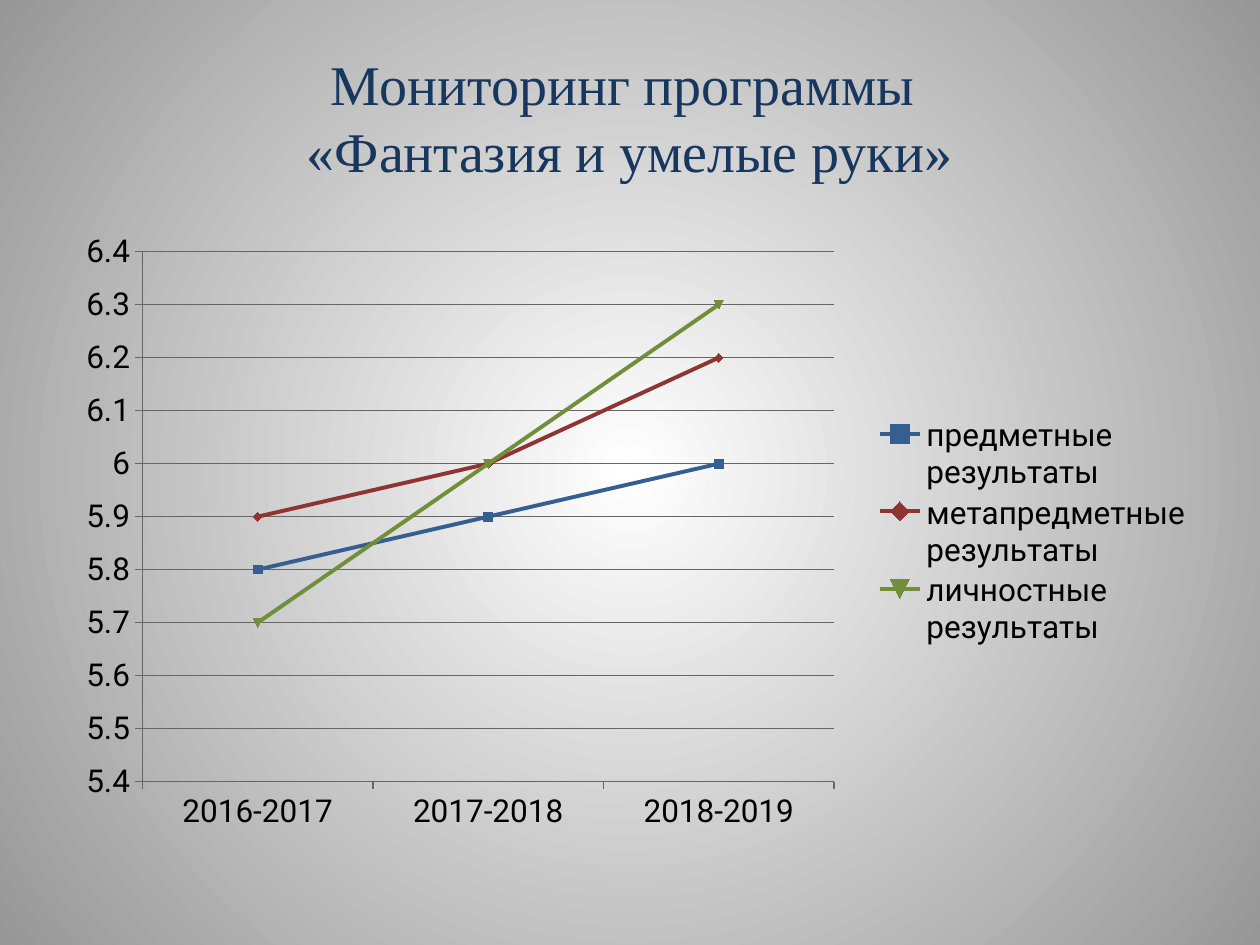
import pptx
import pptx.chart.data
import pptx.dml.color
import pptx.enum.chart
import pptx.enum.text
import pptx.oxml
import pptx.oxml.ns
import pptx.util

Pt = pptx.util.Pt
RGBColor = pptx.dml.color.RGBColor

NAVY = RGBColor(0x17, 0x37, 0x5E)
BLACK = RGBColor(0, 0, 0)
WHITE = RGBColor(0xFF, 0xFF, 0xFF)
SILVER = RGBColor(0x97, 0x97, 0x97)
GRID = RGBColor(0x66, 0x66, 0x66)
BLUE = RGBColor(0x35, 0x5E, 0x91)
RED = RGBColor(0x8E, 0x34, 0x32)
GREEN = RGBColor(0x71, 0x8E, 0x3A)

YEARS = ["2016-2017", "2017-2018", "2018-2019"]
RESULTS = [
    ("предметные результаты", (5.8, 5.9, 6), BLUE),
    ("метапредметные результаты", (5.9, 6, 6.2), RED),
    ("личностные результаты", (5.7, 6, 6.3), GREEN),
]


def write_text(para, text, font, size, color):
    """Fill a paragraph; a newline in the text becomes a line break."""
    for index, line in enumerate(text.split("\n")):
        if index:
            para.add_line_break()
        span = para.add_run()
        span.text = line
        span.font.name = font
        span.font.size = Pt(size)
        span.font.color.rgb = color


def set_layout(element, x, y, width, height, inner=False):
    """Place a chart part by fractions of the chart area."""
    target = '<c:layoutTarget val="inner"/>' if inner else ""
    layout = pptx.oxml.parse_xml(
        f'<c:layout {pptx.oxml.ns.nsdecls("c")}><c:manualLayout>{target}'
        '<c:xMode val="edge"/><c:yMode val="edge"/>'
        f'<c:x val="{x}"/><c:y val="{y}"/><c:w val="{width}"/><c:h val="{height}"/>'
        "</c:manualLayout></c:layout>")
    for old in element.findall(pptx.oxml.ns.qn("c:layout")):
        element.remove(old)
    # In a legend the layout follows the position; in a plot area it is first.
    position = element.find(pptx.oxml.ns.qn("c:legendPos"))
    if position is None:
        element.insert(0, layout)
    else:
        position.addnext(layout)


class SlideBuilder:
    title_font = "Times New Roman"
    chart_font = "Roboto"

    def __init__(self, page):
        self.page = page

    def radial_background(self, center, edge):
        fill = self.page.background.fill
        fill.gradient()
        for stop, color, position in zip(fill.gradient_stops, (center, edge), (0, 1)):
            stop.color.rgb = color
            stop.position = position
        gradient = self.page.background._cSld.find(".//" + pptx.oxml.ns.qn("a:gradFill"))
        gradient.replace(gradient.find(pptx.oxml.ns.qn("a:lin")), pptx.oxml.parse_xml(
            f'<a:path {pptx.oxml.ns.nsdecls("a")} path="circle">'
            '<a:fillToRect l="50000" t="50000" r="50000" b="50000"/></a:path>'))

    def title(self, text, left, top, width, height):
        box = self.page.shapes.add_textbox(Pt(left), Pt(top), Pt(width), Pt(height))
        frame = box.text_frame
        frame.word_wrap = True
        frame.vertical_anchor = pptx.enum.text.MSO_ANCHOR.MIDDLE
        para = frame.paragraphs[0]
        para.alignment = pptx.enum.text.PP_ALIGN.CENTER
        write_text(para, text, font=self.title_font, size=32, color=NAVY)

    def line_chart(self, categories, series, left, top, width, height):
        data = pptx.chart.data.CategoryChartData()
        data.categories = categories
        for name, values, _ in series:
            data.add_series(name, values)
        chart = self.page.shapes.add_chart(
            pptx.enum.chart.XL_CHART_TYPE.LINE_MARKERS,
            Pt(left), Pt(top), Pt(width), Pt(height), data).chart
        chart.has_title = False
        chart.font.name = self.chart_font
        chart.font.size = Pt(18)
        chart.font.color.rgb = BLACK
        chart.plots[0].vary_by_categories = False
        for line, (_, _, color) in zip(chart.plots[0].series, series):
            line.smooth = False
            line.format.line.width = Pt(2.25)
            line.format.line.color.rgb = color
            line.marker.size = 5
            line.marker.format.fill.solid()
            line.marker.format.fill.fore_color.rgb = color
            line.marker.format.line.color.rgb = color

        chart.category_axis.has_major_gridlines = False
        scale = chart.value_axis
        scale.minimum_scale, scale.maximum_scale, scale.major_unit = 5.4, 6.4, 0.1
        scale.has_major_gridlines = True
        for part in (chart.category_axis, scale, scale.major_gridlines):
            part.format.line.color.rgb = GRID
            part.format.line.width = Pt(0.75)
        for axis in (chart.category_axis, scale):
            axis.major_tick_mark = pptx.enum.chart.XL_TICK_MARK.OUTSIDE

        chart.has_legend = True
        chart.legend.position = pptx.enum.chart.XL_LEGEND_POSITION.RIGHT
        chart.legend.include_in_layout = False
        set_layout(chart.legend._element, 0.71, 0.31, 0.29, 0.38)
        plot_area = chart._chartSpace.chart.plotArea
        set_layout(plot_area, 0.07, 0.05, 0.61, 0.85, inner=True)


def main():
    deck = pptx.Presentation()
    deck.slide_width, deck.slide_height = Pt(720), Pt(540)
    slide = SlideBuilder(deck.slides.add_slide(deck.slide_layouts[6]))
    slide.radial_background(WHITE, SILVER)
    slide.title("Мониторинг программы \n«Фантазия и умелые руки»", 36, 21.6, 648, 90)
    slide.line_chart(YEARS, RESULTS, 36, 126, 648, 356.4)
    deck.save("out.pptx")


if __name__ == "__main__":
    main()
